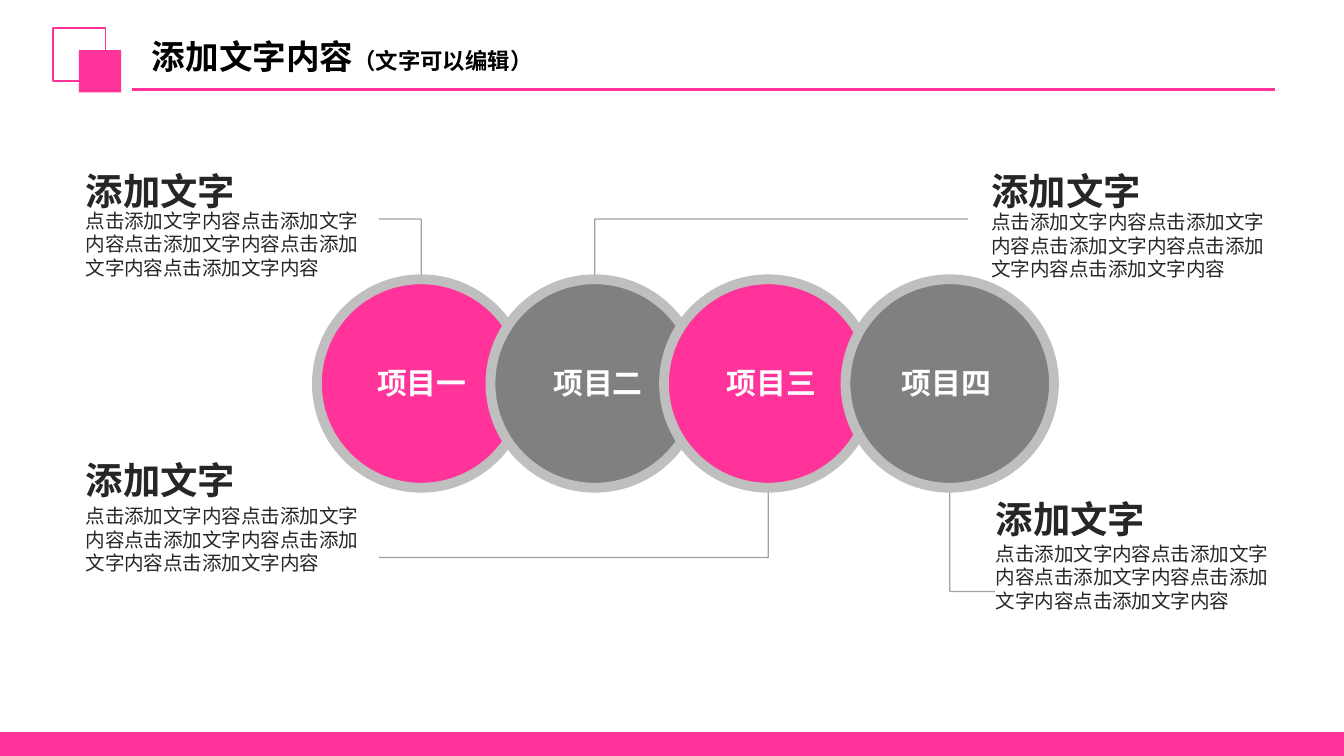
from dataclasses import dataclass

import pptx
import pptx.dml.color
import pptx.enum.shapes
import pptx.oxml
import pptx.oxml.ns
import pptx.util
from pptx.util import Cm, Pt

FONT = "Noto Sans CJK SC"
PINK, GREY, RING = "FF3399", "808080", "BFBFBF"
BLACK, INK, WHITE, LEADER = "000000", "262626", "FFFFFF", "414455"
LINE_HEIGHT = 1.2
DIAMETER, CIRCLE_TOP = 3.94, 5.28
NOTE_WIDTH = 5.79
NOTE_HEADING = "添加文字"
NOTE_BODY = "点击添加文字内容" * 5


@dataclass
class Item:
    """A circle with its label and the corner and end of its leader line."""
    label: str
    left: float
    label_left: float
    fill: str
    leader_y: float
    leader_end: float


@dataclass
class Note:
    left: float
    heading_top: float
    body_top: float


@dataclass
class Run:
    text: str
    size: float
    color: str
    bold: bool = False


ITEMS = [
    Item("项目一", 5.99, 6.88, PINK, 4.14, 7.16),
    Item("项目二", 9.27, 10.21, GREY, 4.14, 18.29),
    Item("项目三", 12.55, 13.49, PINK, 10.54, 7.16),
    Item("项目四", 15.98, 16.79, GREY, 11.18, 18.8),
]
NOTES = [
    Note(1.37, 2.72, 3.81),
    Note(1.37, 8.18, 9.4),
    Note(18.49, 2.72, 3.84),
    Note(18.57, 8.92, 10.11),
]


def rgb(value: str) -> pptx.dml.color.RGBColor:
    return pptx.dml.color.RGBColor.from_string(value)


def add_figure(slide, kind: str, left: float, top: float, width: float, height: float,
               fill: str = "", line: str = "", weight: float = 0.75) -> None:
    figure = slide.shapes.add_shape(pptx.enum.shapes.MSO_SHAPE[kind],
                                    Cm(left), Cm(top), Cm(width), Cm(height))
    figure.shadow.inherit = False
    if fill:
        figure.fill.solid()
        figure.fill.fore_color.rgb = rgb(fill)
    else:
        figure.fill.background()
    if line:
        figure.line.color.rgb = rgb(line)
        figure.line.width = Pt(weight)
    else:
        figure.line.fill.background()


def add_line(slide, start: tuple[float, float], end: tuple[float, float],
             color: str, weight: float, opacity: int = 100) -> None:
    """Draw a straight line; opacity is in percent."""
    line = slide.shapes.add_connector(pptx.enum.shapes.MSO_CONNECTOR.STRAIGHT,
                                      *map(Cm, start + end))
    line.line.color.rgb = rgb(color)
    line.line.width = Pt(weight)
    properties = line._element.spPr
    if opacity < 100:
        tint = properties.find(".//" + pptx.oxml.ns.qn("a:srgbClr"))
        alpha = pptx.oxml.parse_xml(
            f'<a:alpha {pptx.oxml.ns.nsdecls("a")} val="{opacity * 1000}"/>')
        tint.append(alpha)
    properties.append(pptx.oxml.parse_xml(f'<a:effectLst {pptx.oxml.ns.nsdecls("a")}/>'))


def add_text(slide, left: float, top: float, width: float, height: float,
             runs: list[Run], spacing: float = 1.0,
             inset: tuple[float, float] = (0.25, 0.13)) -> None:
    """Add one paragraph; spacing is in lines, inset is horizontal and vertical."""
    frame = slide.shapes.add_textbox(Cm(left), Cm(top), Cm(width), Cm(height)).text_frame
    frame.word_wrap = True
    frame.margin_left = frame.margin_right = Cm(inset[0])
    frame.margin_top = frame.margin_bottom = Cm(inset[1])
    paragraph = frame.paragraphs[0]
    paragraph.line_spacing = Pt(runs[0].size * LINE_HEIGHT * spacing)
    for part in runs:
        run = paragraph.add_run()
        run.text = part.text
        run.font.size = Pt(part.size)
        run.font.bold = part.bold
        run.font.color.rgb = rgb(part.color)
        run.font.name = FONT
        run._r.get_or_add_rPr().append(pptx.oxml.parse_xml(
            f'<a:ea {pptx.oxml.ns.nsdecls("a")} typeface="{FONT}"/>'))


def add_frame(slide) -> None:
    """Draw the title row and the footer band."""
    add_figure(slide, "RECTANGLE", 0, 13.84, 25.4, 0.45, fill=PINK)
    add_figure(slide, "RECTANGLE", 1, 0.53, 1, 1, line=PINK)
    add_figure(slide, "RECTANGLE", 1.49, 0.95, 0.8, 0.8, fill=PINK)
    add_line(slide, (2.5, 1.69), (24.1, 1.69), PINK, 1.25)
    add_text(slide, 2.69, 0.58, 9.75, 0.97,
             [Run("添加文字内容", 18, BLACK, True), Run("（文字可以编辑）", 12, BLACK, True)],
             inset=(0.18, 0.1))


def add_note(slide, note: Note) -> None:
    add_text(slide, note.left, note.heading_top, NOTE_WIDTH, 0.81,
             [Run(NOTE_HEADING, 20, INK, True)], spacing=1.4)
    add_text(slide, note.left, note.body_top, NOTE_WIDTH, 2.64,
             [Run(NOTE_BODY, 10.5, INK)])


def add_leader(slide, item: Item) -> None:
    center = item.left + DIAMETER / 2
    above = item.leader_y < CIRCLE_TOP
    edge = CIRCLE_TOP if above else CIRCLE_TOP + DIAMETER
    corner = (center, item.leader_y)
    add_line(slide, (center, edge), corner, LEADER, 0.75, opacity=50)
    add_line(slide, corner, (item.leader_end, item.leader_y), LEADER, 0.75, opacity=50)


def add_circle(slide, item: Item) -> None:
    add_figure(slide, "OVAL", item.left, CIRCLE_TOP, DIAMETER, DIAMETER,
               fill=item.fill, line=RING, weight=5.25)
    add_text(slide, item.label_left, 6.76, 2.54, 1.19, [Run(item.label, 16, WHITE, True)])


def main() -> None:
    deck = pptx.Presentation()
    deck.slide_width, deck.slide_height = Cm(25.4), Cm(14.29)
    slide = deck.slides.add_slide(deck.slide_layouts[6])
    add_frame(slide)
    for note in NOTES:
        add_note(slide, note)
    for item in ITEMS:
        add_leader(slide, item)
    for item in ITEMS:
        add_circle(slide, item)
    deck.save("out.pptx")


if __name__ == "__main__":
    main()
